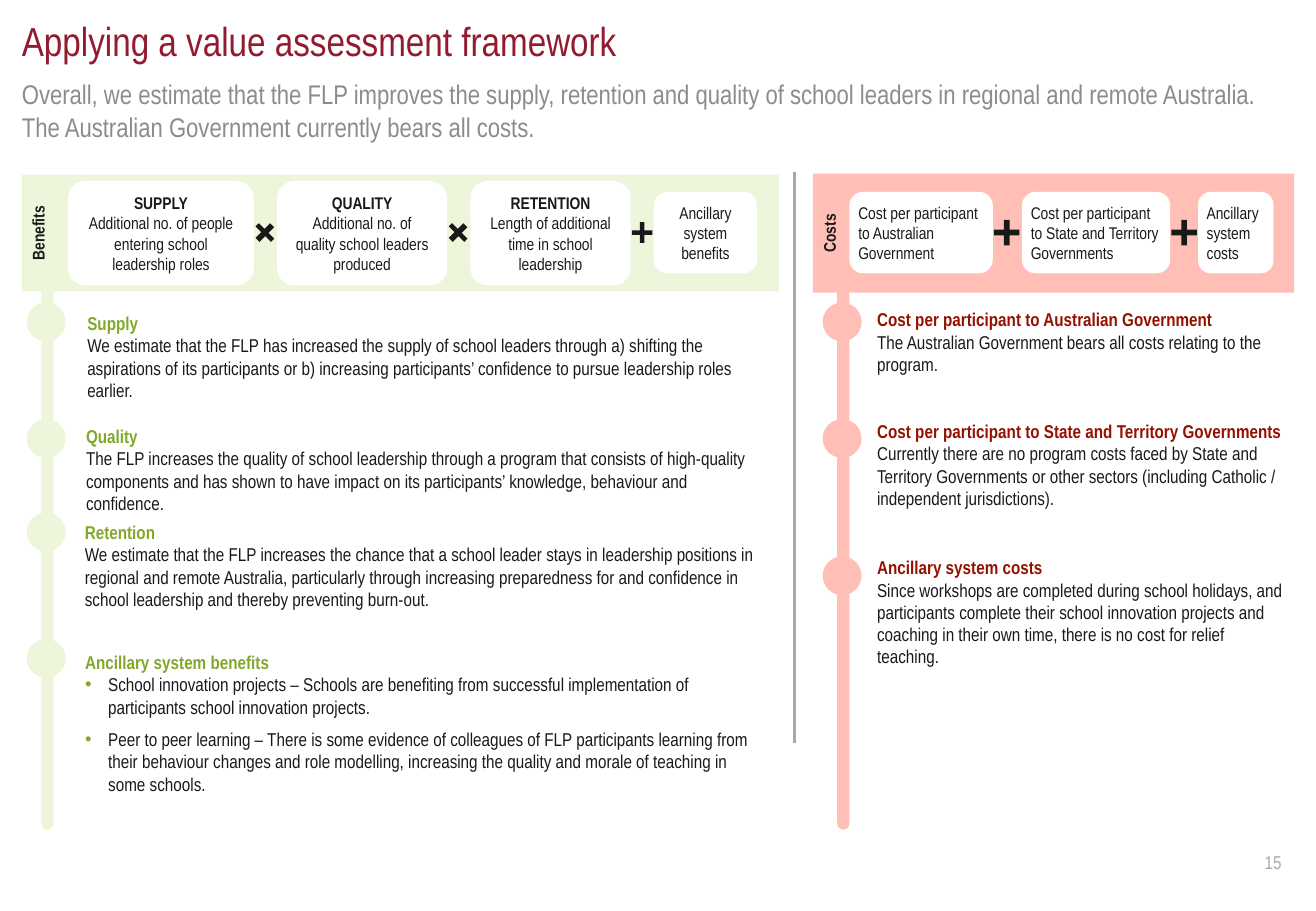
"""Build the value assessment framework slide."""
from dataclasses import dataclass

from lxml import etree
from pptx import Presentation
from pptx import util as u
from pptx.dml.color import RGBColor
from pptx.enum import shapes, text
from pptx.oxml import ns
from pptx.shapes import autoshape, base
from pptx.slide import Slide
from pptx.text import text as words

PX = 9144
FONT = "Arial Narrow"
WINE = RGBColor(0x93, 0x1B, 0x2F)
GREY = RGBColor(0x8C, 0x8C, 0x8C)
SILVER = RGBColor(0xA9, 0xA9, 0xA9)
INK = RGBColor(0x19, 0x19, 0x19)
WHITE = RGBColor(0xFF, 0xFF, 0xFF)
PALE_GREEN = RGBColor(0xED, 0xF6, 0xDA)
GREEN = RGBColor(0x82, 0xA8, 0x2A)
PINK = RGBColor(0xFF, 0xBF, 0xB7)
RED = RGBColor(0x94, 0x11, 0x00)
KIND = shapes.MSO_SHAPE
CENTER = text.PP_ALIGN.CENTER
LEFT = text.PP_ALIGN.LEFT
TOP = text.MSO_ANCHOR.TOP
MIDDLE = text.MSO_ANCHOR.MIDDLE


@dataclass(frozen=True)
class Area:
    left: int
    top: int
    width: int
    height: int


@dataclass(frozen=True)
class Card:
    area: Area
    lines: tuple[str, ...]
    heading: str = ""


@dataclass(frozen=True)
class Sign:
    area: Area
    rotation: float = 0


@dataclass(frozen=True)
class Note:
    area: Area
    dot_top: int
    heading: str
    detail: str = ""
    bullets: tuple[str, ...] = ()


@dataclass(frozen=True)
class Side:
    label: str
    tint: RGBColor
    accent: RGBColor
    band: Area
    bar_left: int
    dot_left: int
    card_align: text.PP_ALIGN
    card_inset: int
    cards: tuple[Card, ...]
    signs: tuple[Sign, ...]
    notes: tuple[Note, ...]


BENEFITS = Side(
    "Benefits", PALE_GREEN, GREEN, Area(18, 144, 623, 96), 34, 22, CENTER, 10,
    (
        Card(Area(56, 149, 153, 86), ("Additional no. of people entering school leadership roles",), "SUPPLY"),
        Card(Area(228, 149, 140, 86), ("Additional no. of quality school leaders produced",), "QUALITY"),
        Card(Area(387, 149, 132, 86), ("Length of additional time in school leadership",), "RETENTION"),
        Card(Area(538, 158, 85, 67), ("Ancillary", "system", "benefits")),
    ),
    (
        Sign(Area(209, 183, 18, 17), 45),
        Sign(Area(368, 183, 18, 17), 45),
        Sign(Area(520, 183, 17, 17)),
    ),
    (
        Note(Area(62, 252, 583, 84), 249, "Supply",
             "We estimate that the FLP has increased the supply of school leaders through a) shifting the aspirations "
             "of its participants or b) increasing participants’ confidence to pursue leadership roles earlier."),
        Note(Area(61, 345, 583, 66), 345, "Quality",
             "The FLP increases the quality of school leadership through a program that consists of high-quality "
             "components and has shown to have impact on its participants’ knowledge, behaviour and confidence."),
        Note(Area(60, 424, 583, 84), 422, "Retention",
             "We estimate that the FLP increases the chance that a school leader stays in leadership positions in "
             "regional and remote Australia, particularly through increasing preparedness for and confidence in "
             "school leadership and thereby preventing burn-out."),
        Note(Area(60, 531, 583, 130), 526, "Ancillary system benefits", bullets=(
            "School innovation projects – Schools are benefiting from successful implementation of participants "
            "school innovation projects.",
            "Peer to peer learning – There is some evidence of colleagues of FLP participants learning from their "
            "behaviour changes and role modelling, increasing the quality and morale of teaching in some schools.",
        )),
    ),
)
COSTS = Side(
    "Costs", PINK, RED, Area(669, 143, 396, 98), 689, 677, LEFT, 4,
    (
        Card(Area(699, 158, 118, 67), ("Cost per participant to Australian Government",)),
        Card(Area(841, 158, 122, 67), ("Cost per participant to State and Territory Governments",)),
        Card(Area(986, 158, 62, 67), ("Ancillary system costs",)),
    ),
    (Sign(Area(818, 181, 21, 21)), Sign(Area(964, 181, 21, 21))),
    (
        Note(Area(712, 249, 354, 66), 249, "Cost per participant to Australian Government",
             "The Australian Government bears all costs relating to the program."),
        Note(Area(712, 341, 354, 84), 345, "Cost per participant to State and Territory Governments",
             "Currently there are no program costs faced by State and Territory Governments or other sectors "
             "(including Catholic / independent jurisdictions)."),
        Note(Area(712, 453, 354, 103), 458, "Ancillary system costs",
             "Since workshops are completed during school holidays, and participants complete their school "
             "innovation projects and coaching in their own time, there is no cost for relief teaching."),
    ),
)


def place(item: base.BaseShape, area: Area) -> None:
    item.left, item.top = area.left * PX, area.top * PX
    item.width, item.height = area.width * PX, area.height * PX


def set_frame(frame: words.TextFrame, *, across: int = 10, down: int = 5, anchor: text.MSO_ANCHOR = TOP,
              wrap: bool = True) -> None:
    frame.auto_size = text.MSO_AUTO_SIZE.NONE
    frame.word_wrap, frame.vertical_anchor = wrap, anchor
    frame.margin_left = frame.margin_right = across * PX
    frame.margin_top = frame.margin_bottom = down * PX


def write(frame: words.TextFrame, content: str, *, size: int, colour: RGBColor = INK, bold: bool = False,
          align: text.PP_ALIGN = LEFT, after: int = 0, bullet: RGBColor | None = None) -> None:
    para = frame.paragraphs[0] if not frame.text else frame.add_paragraph()
    properties = para._p.get_or_add_pPr()
    indent = 19 * PX if bullet else 0
    properties.set("marL", str(indent))
    properties.set("indent", str(-indent))
    if bullet:
        tint = etree.SubElement(properties, ns.qn("a:buClr"))
        etree.SubElement(tint, ns.qn("a:srgbClr"), val=str(bullet))
        etree.SubElement(properties, ns.qn("a:buFont"), typeface="Arial")
        etree.SubElement(properties, ns.qn("a:buChar"), char="•")
    else:
        etree.SubElement(properties, ns.qn("a:buNone"))
    para.alignment = align
    para.space_before, para.space_after = u.Pt(0), u.Pt(after)
    span = para.add_run()
    span.text = content
    span.font.name, span.font.size, span.font.bold = FONT, u.Pt(size), bold
    span.font.color.rgb = colour


def draw_shape(page: Slide, kind: shapes.MSO_SHAPE, area: Area, colour: RGBColor) -> autoshape.Shape:
    shape = page.shapes.add_shape(kind, 0, 0, 0, 0)
    place(shape, area)
    shape.shadow.inherit = False
    shape.fill.solid()
    shape.fill.fore_color.rgb = colour
    shape.line.fill.background()
    return shape


def draw_note(page: Slide, side: Side, note: Note, list_box: autoshape.Shape) -> None:
    draw_shape(page, KIND.OVAL, Area(side.dot_left, note.dot_top, 32, 32), side.tint)
    box = list_box if note.bullets else page.shapes.add_textbox(0, 0, 0, 0)
    place(box, note.area)
    set_frame(box.text_frame)
    write(box.text_frame, note.heading, size=11, colour=side.accent, bold=True)
    if note.detail:
        write(box.text_frame, note.detail, size=11, after=6)
    for item in note.bullets:
        write(box.text_frame, item, size=11, after=6, bullet=side.accent)


def draw_side(page: Slide, side: Side, list_box: autoshape.Shape) -> None:
    bar = draw_shape(page, KIND.ROUNDED_RECTANGLE, Area(side.bar_left, 172, 10, 511), side.tint)
    bar.adjustments[0] = 0.5
    band = draw_shape(page, KIND.RECTANGLE, side.band, side.tint).text_frame
    set_frame(band)
    band._txBody.bodyPr.set("vert", "vert270")
    write(band, side.label, size=10, bold=True, align=CENTER)
    for card in side.cards:
        frame = draw_shape(page, KIND.ROUNDED_RECTANGLE, card.area, WHITE).text_frame
        set_frame(frame, across=side.card_inset, anchor=MIDDLE)
        if card.heading:
            write(frame, card.heading, size=10, bold=True, align=side.card_align)
        for line in card.lines:
            write(frame, line, size=10, align=side.card_align)
    for sign in side.signs:
        plus = draw_shape(page, KIND.CROSS, sign.area, INK)
        plus.adjustments[0], plus.rotation = 0.39, sign.rotation
    for note in side.notes:
        draw_note(page, side, note, list_box)


def main() -> None:
    deck = Presentation()
    deck.slide_width, deck.slide_height = 1083 * PX, 750 * PX
    page = deck.slides.add_slide(deck.slide_layouts.get_by_name("Two Content"))
    title, summary, list_box = page.placeholders
    for box, area in ((title, Area(18, 13, 1047, 40)), (summary, Area(18, 64, 1047, 54))):
        place(box, area)
        set_frame(box.text_frame, across=0, down=0)
    write(title.text_frame, "Applying a value assessment framework", size=24, colour=WINE)
    write(summary.text_frame, "Overall, we estimate that the FLP improves the supply, retention and quality of school "
          "leaders in regional and remote Australia. The Australian Government currently bears all costs.",
          size=16, colour=GREY, after=6)
    for side in (BENEFITS, COSTS):
        draw_side(page, side, list_box)
    divider = page.shapes.add_connector(shapes.MSO_CONNECTOR.STRAIGHT, 654 * PX, 142 * PX, 654 * PX, 612 * PX)
    divider.line.color.rgb, divider.line.width = SILVER, u.Pt(1.5)
    etree.SubElement(divider._element.spPr, ns.qn("a:effectLst"))
    number = page.shapes.add_textbox(1031 * PX, 696 * PX, 34 * PX, 29 * PX).text_frame
    set_frame(number, wrap=False)
    write(number, "15", size=11, colour=SILVER, after=6)
    deck.save("out.pptx")


if __name__ == "__main__":
    main()
